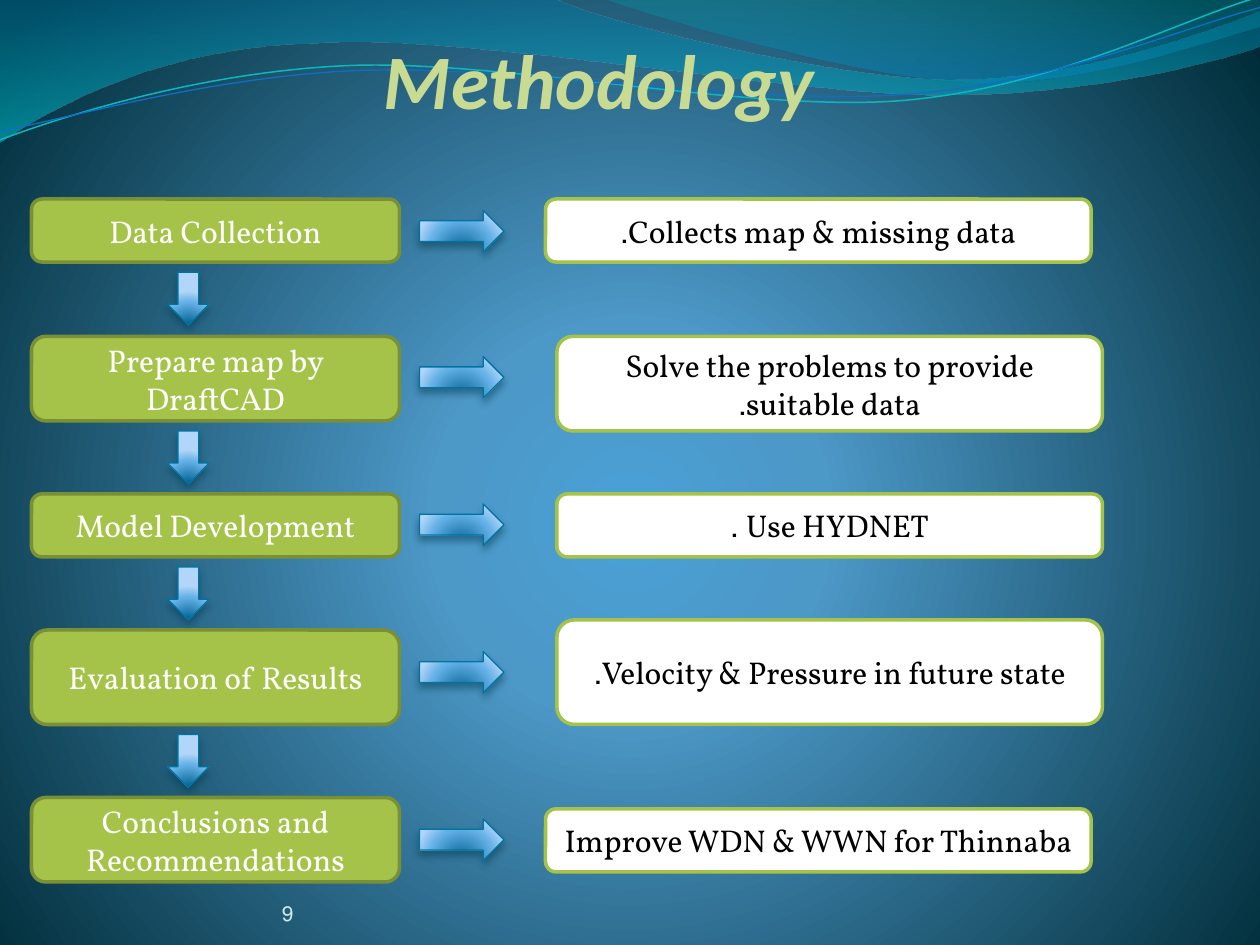
from dataclasses import dataclass
from math import cos, radians, sin

from lxml import etree
from pptx import Presentation
from pptx.dml.color import RGBColor
from pptx.enum.shapes import MSO_SHAPE
from pptx.enum.text import MSO_ANCHOR, MSO_AUTO_SIZE, PP_ALIGN
from pptx.oxml.ns import qn
from pptx.util import Inches, Pt

ROUND_BOX = MSO_SHAPE.ROUNDED_RECTANGLE
RIGHT_ARROW, DOWN_ARROW = MSO_SHAPE.RIGHT_ARROW, MSO_SHAPE.DOWN_ARROW
CENTER, RIGHT = PP_ALIGN.CENTER, PP_ALIGN.RIGHT
MIDDLE, BOTTOM = MSO_ANCHOR.MIDDLE, MSO_ANCHOR.BOTTOM


@dataclass(frozen=True)
class Theme:
    title: str = "C9DA92"
    number: str = "D1EAEE"
    green: str = "A5C249"
    green_edge: str = "7A9036"
    white: str = "FFFFFF"
    black: str = "000000"
    arrow_edge: str = "0074A1"
    shadow: str = "00374C"
    # Gradient stops: position, colour, opacity (percent)
    backdrop: tuple = ((0, "4AA0D6", 100), (25, "4C98C7", 100), (100, "002C38", 100))
    arrow: tuple = ((0, "006091", 100), (68, "64B1E7", 100), (100, "B1D6F9", 100))
    wide_wave: tuple = ((0, "0074A1", 45), (100, "00C6CF", 55))
    right_wave: tuple = ((0, "00A1A9", 30), (80, "008BBF", 45))
    teal_line: str = "0AB8BF"
    blue_line: str = "0F6FC6"
    heading_font: str = "Calibri"
    body_font: str = "Vollkorn"
    title_size: int = 44
    body_size: int = 18
    number_size: int = 12


THEME = Theme()

# Wave outlines in inches: a start, then lines (2 values) or cubic curves (6 values)
WIDE_WAVE = ((0, 0), (4.4, -0.01), (4.76, 0.17, 6.64, 0.63, 7.58, 0.63),
             (8.53, 0.63, 9.58, 0.26, 10, 0.09), (10.01, 0.36),
             (9.83, 0.44, 8.7, 0.76, 7.46, 0.75), (6.22, 0.75, 3.82, 0.28, 2.57, 0.34),
             (1.29, 0.36, 0.46, 0.83, -0.01, 1.13), (0, 0))
RIGHT_WAVE = ((4.79, -0.01), (5.09, 0.11, 6.82, 0.62, 7.69, 0.65),
              (8.56, 0.69, 9.61, 0.32, 10, 0.21), (10, 0), (4.79, -0.01))
TEAL_LINE = ((0, 1.11), (0.48, 0.93, 1.58, 0.57, 2.77, 0.52),
             (3.95, 0.47, 5.93, 0.89, 7.13, 0.8), (8.33, 0.71, 9.38, 0.15, 9.98, -0.02))
BLUE_LINE = ((0, 1.04), (0.47, 0.96, 1.64, 0.61, 2.83, 0.56),
             (4.03, 0.51, 5.97, 0.84, 7.17, 0.75), (8.36, 0.67, 9.41, 0.21, 10, 0.06))
LINE_TILT = -2.7
LINE_PIVOT = (4.99, 0.58)

# Step, its top and height, arrow top, detail, its left, top and height
STEPS = (
    ("Data Collection", 1.58, 0.5, 1.67,
     "Collects map & missing data.", 4.33, 1.58, 0.5),
    ("Prepare map by DraftCAD", 2.67, 0.67, 2.83,
     "Solve the problems to provide suitable data.", 4.42, 2.67, 0.75),
    ("Model Development", 3.92, 0.5, 4,
     "Use HYDNET .", 4.42, 3.92, 0.5),
    ("Evaluation of Results", 5, 0.75, 5.17,
     "Velocity & Pressure in future state.", 4.42, 4.92, 0.83),
    ("Conclusions and Recommendations", 6.33, 0.67, 6.5,
     "Improve WDN & WWN for Thinnaba", 4.33, 6.42, 0.5),
)


def inches(box):
    return [Inches(value) for value in box]


def add_gradient(solid, stops, angle=None, focus=None):
    """Replace a solid fill element by a linear or circular gradient."""
    gradient = etree.Element(qn("a:gradFill"), rotWithShape="1")
    stop_list = etree.SubElement(gradient, qn("a:gsLst"))
    for position, color, opacity in stops:
        stop = etree.SubElement(stop_list, qn("a:gs"), pos=str(position * 1000))
        shade = etree.SubElement(stop, qn("a:srgbClr"), val=color)
        if opacity < 100:
            etree.SubElement(shade, qn("a:alpha"), val=str(opacity * 1000))
    if focus:
        circle = etree.SubElement(gradient, qn("a:path"), path="circle")
        sides = {side: str(value * 1000) for side, value in zip("ltrb", focus)}
        etree.SubElement(circle, qn("a:fillToRect"), sides)
    else:
        etree.SubElement(gradient, qn("a:lin"), ang=str(angle * 60000), scaled="1")
    solid.getparent().replace(solid, gradient)


def fill_gradient(shape, stops, **direction):
    shape.fill.solid()
    add_gradient(shape.element.xpath("./p:spPr/a:solidFill")[0], stops, **direction)


def set_line(shape, color, width):
    shape.line.color.rgb = RGBColor.from_string(color)
    shape.line.width = Pt(width)


def write(shape, text, font, size, color, align=CENTER):
    """Write one right-to-left paragraph."""
    shape.text_frame.word_wrap = True
    paragraph = shape.text_frame.paragraphs[0]
    paragraph.text = text
    paragraph.alignment = align
    paragraph._p.get_or_add_pPr().set("rtl", "1")
    paragraph.font.name = font
    paragraph.font.size = Pt(size)
    paragraph.font.color.rgb = RGBColor.from_string(color)
    return paragraph


def turn(point, degrees):
    """Turn a point about the pivot of the wave lines."""
    angle = radians(degrees)
    x, y = (value - middle for value, middle in zip(point, LINE_PIVOT))
    return (LINE_PIVOT[0] + x * cos(angle) - y * sin(angle),
            LINE_PIVOT[1] + x * sin(angle) + y * cos(angle))


def add_wave(slide, box, outline, closed, tilt=0):
    """Lay out all knots as a polygon, then join each three into a cubic curve."""
    knots = [turn(segment[i:i + 2], -tilt)
             for segment in outline for i in range(0, len(segment), 2)]
    points = [(Inches(box[0] + x), Inches(box[1] + y)) for x, y in knots]
    builder = slide.shapes.build_freeform(*points[0])
    builder.add_line_segments(points[1:], close=closed)
    wave = builder.convert_to_shape()
    wave.rotation = tilt
    wave.shadow.inherit = False
    sides = iter(wave.element.xpath(".//a:lnTo"))
    for segment in outline[1:]:
        side = next(sides)
        if len(segment) == 6:
            curve = etree.Element(qn("a:cubicBezTo"))
            side.addprevious(curve)
            for part in (side, next(sides), next(sides)):
                curve.append(part[0])
                part.getparent().remove(part)
    return wave


def add_backdrop(slide, box):
    slide.background.fill.solid()
    add_gradient(slide.element.xpath(".//p:bgPr/a:solidFill")[0],
                 THEME.backdrop, focus=(10, 110, 10, 100))
    for outline, stops in ((WIDE_WAVE, THEME.wide_wave), (RIGHT_WAVE, THEME.right_wave)):
        wave = add_wave(slide, box, outline, True)
        fill_gradient(wave, stops, angle=90)
        wave.line.fill.background()
    for outline, color, width in ((TEAL_LINE, THEME.teal_line, 0.85),
                                  (BLUE_LINE, THEME.blue_line, 0.75)):
        wave = add_wave(slide, box, outline, False, LINE_TILT)
        wave.fill.background()
        set_line(wave, color, width)


def add_title(slide, box):
    title = slide.shapes.add_textbox(*inches(box))
    heading = write(title, "Methodology", THEME.heading_font, THEME.title_size, THEME.title)
    heading.font.bold = heading.font.italic = True
    title.text_frame.auto_size = MSO_AUTO_SIZE.SHAPE_TO_FIT_TEXT


def add_card(slide, box, text, fill, edge, color):
    card = slide.shapes.add_shape(ROUND_BOX, *inches(box))
    card.shadow.inherit = False
    card.fill.solid()
    card.fill.fore_color.rgb = RGBColor.from_string(fill)
    set_line(card, edge, 2)
    card.text_frame.vertical_anchor = MIDDLE
    write(card, text, THEME.body_font, THEME.body_size, color)


def add_arrow(slide, kind, box):
    arrow = slide.shapes.add_shape(kind, *inches(box))
    fill_gradient(arrow, THEME.arrow, focus=(50, 130, 50, -30))
    set_line(arrow, THEME.arrow_edge, 0.75)
    arrow.shadow.inherit = False
    effects = arrow.element.spPr.find(qn("a:effectLst"))
    shadow = etree.SubElement(effects, qn("a:outerShdw"), blurRad=str(Pt(4.5)),
                              dist=str(Pt(3)), dir="5400000", rotWithShape="0")
    shade = etree.SubElement(shadow, qn("a:srgbClr"), val=THEME.shadow)
    etree.SubElement(shade, qn("a:alpha"), val="48000")


def add_flow(slide, box):
    left, top = box[:2]
    for step, step_top, height, arrow_top, detail, indent, detail_top, detail_height in STEPS:
        add_card(slide, (left + 0.25, top + step_top, 2.92, height), step,
                 THEME.green, THEME.green_edge, THEME.white)
        add_arrow(slide, RIGHT_ARROW, (left + 3.33, top + arrow_top, 0.67, 0.33))
        add_card(slide, (left + indent, top + detail_top, 4.33, detail_height), detail,
                 THEME.white, THEME.green, THEME.black)
        if step != STEPS[-1][0]:
            add_arrow(slide, DOWN_ARROW,
                      (left + 1.33, top + step_top + height + 0.08, 0.33, 0.42))


def add_page_number(slide, box):
    number = slide.shapes.add_textbox(*inches(box))
    frame = number.text_frame
    frame.margin_left = frame.margin_top = frame.margin_right = frame.margin_bottom = 0
    frame.vertical_anchor = BOTTOM
    write(number, "9", THEME.body_font, THEME.number_size, THEME.number, RIGHT)


def main():
    deck = Presentation()
    deck.slide_width, deck.slide_height = Inches(10), Inches(7.5)
    slide = deck.slides.add_slide(deck.slide_layouts[6])
    add_backdrop(slide, (0, 0, 10, 7.5))
    add_title(slide, (0.59, 0.21, 8.33, 0.84))
    add_flow(slide, (0, 0, 10, 7.5))
    add_page_number(slide, (0, 6.95, 2.33, 0.4))
    deck.save("out.pptx")


if __name__ == "__main__":
    main()
